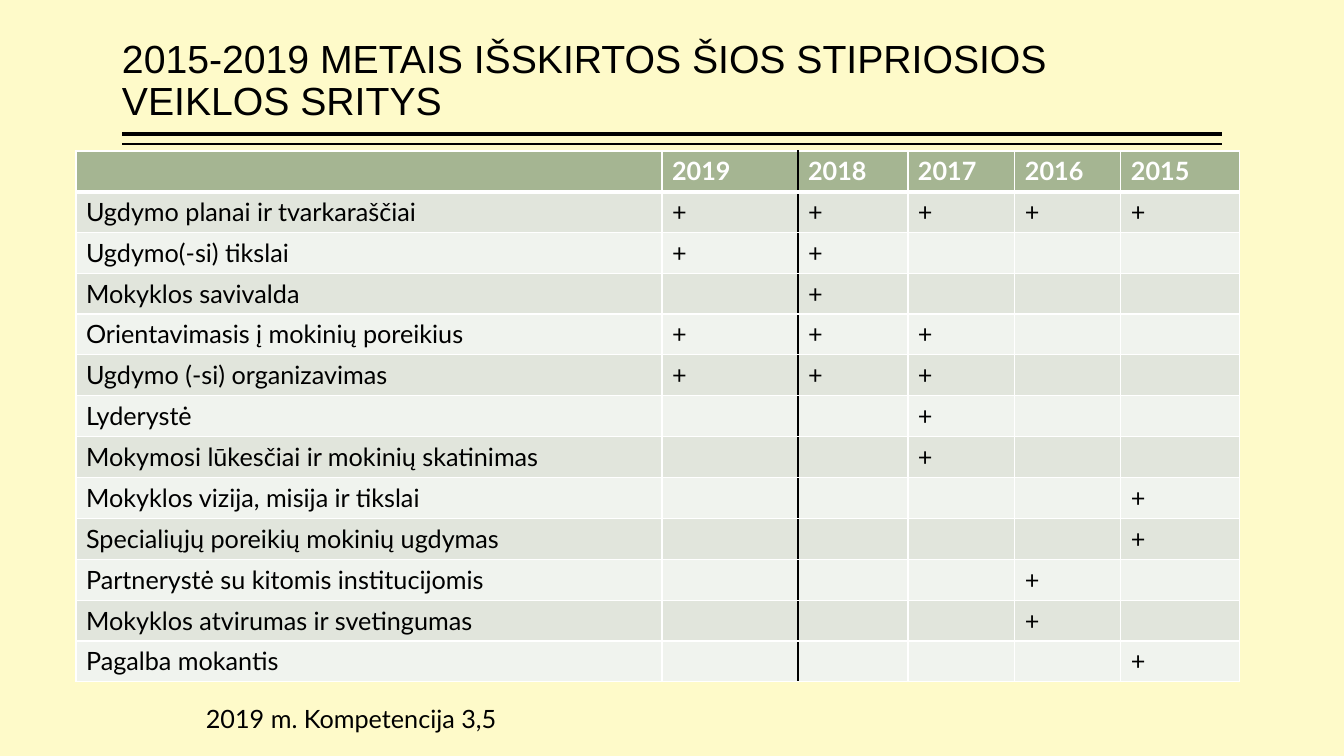
from lxml import etree
from pptx import Presentation
from pptx import util as u
from pptx.dml.color import RGBColor
from pptx.enum import shapes, text
from pptx.oxml import ns

SCALE = 914400 / 100.8
BLACK, WHITE = "000000", "FFFFFF"
HEAD, DARK, LIGHT = "A5B592", "E1E5DC", "F0F3EE"
YEARS = ["2019", "2018", "2017", "2016", "2015"]
AREAS = [
    ("Ugdymo planai ir tvarkaraščiai", YEARS),
    ("Ugdymo(-si) tikslai", ["2019", "2018"]),
    ("Mokyklos savivalda", ["2018"]),
    ("Orientavimasis į mokinių poreikius", ["2019", "2018", "2017"]),
    ("Ugdymo (-si) organizavimas", ["2019", "2018", "2017"]),
    ("Lyderystė", ["2017"]),
    ("Mokymosi lūkesčiai ir mokinių skatinimas", ["2017"]),
    ("Mokyklos vizija, misija ir tikslai", ["2015"]),
    ("Specialiųjų poreikių mokinių ugdymas", ["2015"]),
    ("Partnerystė su kitomis institucijomis", ["2016"]),
    ("Mokyklos atvirumas ir svetingumas", ["2016"]),
    ("Pagalba mokantis", ["2015"]),
]
WIDTHS = [586, 136, 110, 107, 106, 119]


def px(n):
    return u.Emu(round(n * SCALE))


def paint(color, code):
    color.rgb = RGBColor.from_string(code)


def write(para, words, size, face="Lato", code=BLACK, bold=False):
    run = para.add_run()
    run.text = words
    run.font.size, run.font.name, run.font.bold = u.Pt(size), face, bold
    paint(run.font.color, code)


def add_rule(slide, x, y, w, points):
    line = slide.shapes.add_connector(
        shapes.MSO_CONNECTOR.STRAIGHT, px(x + w), px(y), px(x), px(y))
    line.line.width = u.Pt(points)
    paint(line.line.color, BLACK)
    etree.SubElement(line._element.spPr, ns.qn("a:effectLst"))


def add_title(slide, x, y, w, h):
    title = slide.shapes.title
    title.left, title.top, title.width, title.height = map(px, (x, y, w, h))
    frame = title.text_frame
    frame.word_wrap = True
    frame.auto_size = text.MSO_AUTO_SIZE.NONE
    frame.vertical_anchor = text.MSO_ANCHOR.BOTTOM
    frame.margin_left = frame.margin_right = 0
    frame.margin_top = frame.margin_bottom = px(5)
    para = frame.paragraphs[0]
    para.alignment = text.PP_ALIGN.LEFT
    para.line_spacing = 0.9
    write(para, "2015-2019 METAIS IŠSKIRTOS ŠIOS STIPRIOSIOS VEIKLOS SRITYS",
          28, "Arial")
    add_rule(slide, x, y + h + 5, w, 3)
    add_rule(slide, x, y + h + 15, w, 1)


def add_edges(cell, row, col):
    edges = [
        ("L", BLACK if col == 2 else WHITE, 1),
        ("R", BLACK if col == 1 else WHITE, 1),
        ("T", WHITE, 3 if row == 1 else 1),
        ("B", WHITE, 3 if row == 0 else 1),
    ]
    props = cell._tc.get_or_add_tcPr()
    for spot, (side, code, points) in enumerate(edges):
        edge = etree.Element(ns.qn("a:ln" + side), w=str(u.Pt(points)))
        fill = etree.SubElement(edge, ns.qn("a:solidFill"))
        etree.SubElement(fill, ns.qn("a:srgbClr"), val=code)
        props.insert(spot, edge)


def add_grid(slide, x, y, w, h):
    rows = [[""] + YEARS]
    rows += [[area] + ["+" if year in marks else "" for year in YEARS]
             for area, marks in AREAS]
    grid = slide.shapes.add_table(
        len(rows), len(WIDTHS), px(x), px(y), px(w), px(h)).table
    for col, width in zip(grid.columns, WIDTHS):
        col.width = px(width)
    for r, row in enumerate(rows):
        grid.rows[r].height = px(h / len(rows))
        for c, words in enumerate(row):
            cell = grid.cell(r, c)
            cell.fill.solid()
            paint(cell.fill.fore_color,
                  HEAD if r == 0 else DARK if r % 2 else LIGHT)
            add_edges(cell, r, c)
            if words:
                write(cell.text_frame.paragraphs[0], words, 18,
                      code=BLACK if r else WHITE, bold=r == 0)


def add_note(slide, x, y, w, h):
    frame = slide.shapes.add_textbox(*map(px, (x, y, w, h))).text_frame
    frame.word_wrap = True
    frame.auto_size = text.MSO_AUTO_SIZE.SHAPE_TO_FIT_TEXT
    write(frame.paragraphs[0], "2019 m. Kompetencija 3,5", 18)


def main():
    deck = Presentation()
    deck.slide_width, deck.slide_height = px(1344), px(756)
    slide = deck.slides.add_slide(deck.slide_layouts[5])
    slide.background.fill.solid()
    paint(slide.background.fill.fore_color, "FEFAC9")
    add_title(slide, 122, 8, 1100, 121)
    add_grid(slide, 76, 151, sum(WIDTHS), 525)
    add_note(slide, 196, 698, 357, 40)
    deck.save("out.pptx")


if __name__ == "__main__":
    main()
